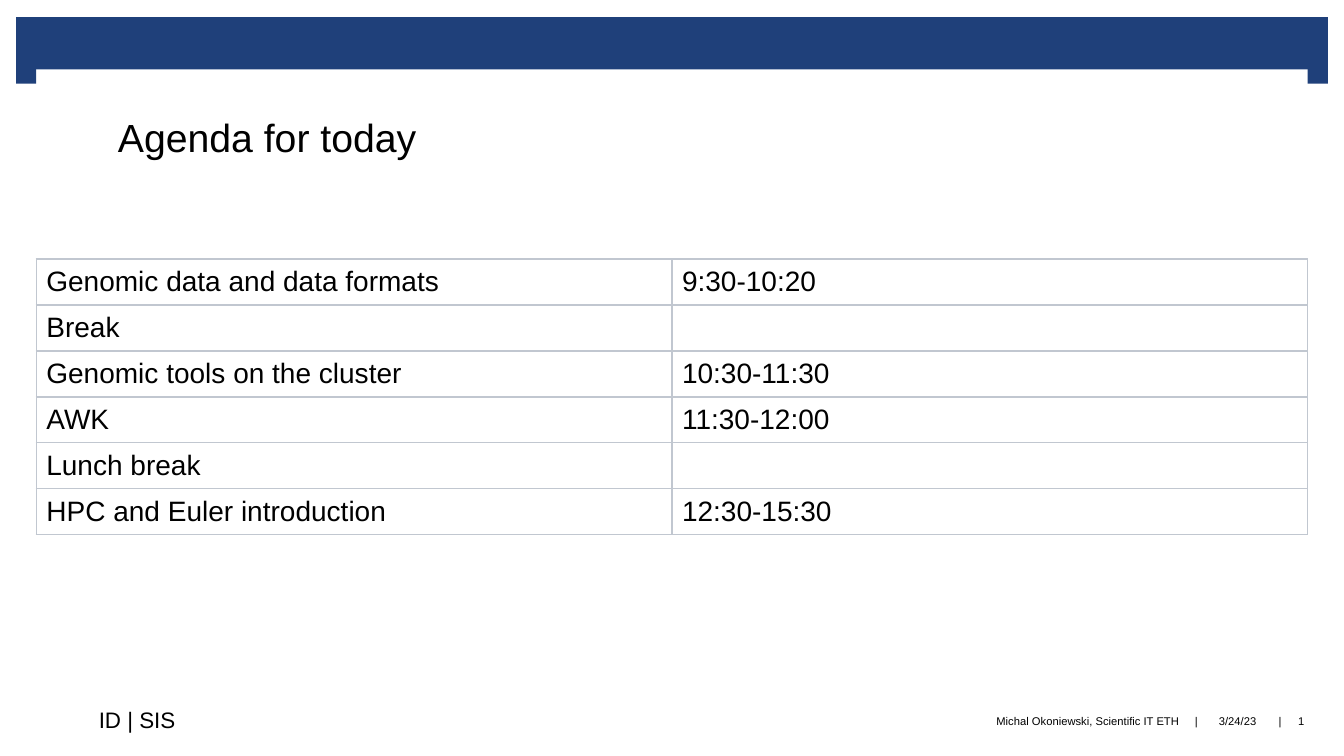
import dataclasses

import lxml.etree
import pptx
import pptx.dml.color
import pptx.enum.shapes
import pptx.enum.text
import pptx.oxml.ns
import pptx.slide
import pptx.table
import pptx.text.text
import pptx.util

NAVY = pptx.dml.color.RGBColor(0x1F, 0x40, 0x7A)
BLACK = pptx.dml.color.RGBColor(0, 0, 0)
GREY = pptx.dml.color.RGBColor(0xC1, 0xC7, 0xD0)
FONT = "Arial"
ALIGN = pptx.enum.text.PP_ALIGN
MIDDLE = pptx.enum.text.MSO_ANCHOR.MIDDLE

WIDTH = pptx.util.Inches(13.33)
HEIGHT = pptx.util.Inches(7.5)


@dataclasses.dataclass(frozen=True)
class Box:
    """A place in percent of the slide's width and height."""
    left: float
    top: float
    width: float
    height: float

    def place(self) -> tuple[int, int, int, int]:
        return (across(self.left), down(self.top),
                across(self.width), down(self.height))


@dataclasses.dataclass(frozen=True)
class Label:
    text: str
    box: Box
    size: int = 8
    align: ALIGN = ALIGN.CENTER


def across(share: float) -> int:
    return round(WIDTH * share / 100)


def down(share: float) -> int:
    return round(HEIGHT * share / 100)


# Header: a bar with a foot at each end
EDGE, SPAN, FOOT = 1.2, 97.6, 1.5
BARS = [
    Box(EDGE, 2.27, SPAN, 6.93),
    Box(EDGE, 8.67, FOOT, 2.4),
    Box(EDGE + SPAN - FOOT, 8.67, FOOT, 2.4),
]

# Title and footer
BASE, TALL = 92, 6.8
LABELS = [
    Label("Agenda for today", Box(8.78, 14.27, 24, 7.6), 28, ALIGN.LEFT),
    Label("ID | SIS", Box(7.35, 90.93, 9, 8.53), 16, ALIGN.LEFT),
    Label("Michal Okoniewski, Scientific IT ETH",
          Box(49.96, BASE, 37.8, TALL), align=ALIGN.RIGHT),
    Label("|", Box(88.45, BASE, 1.13, TALL)),
    Label("3/24/23", Box(89.57, BASE, 5.03, TALL)),
    Label("|", Box(94.67, BASE, 1.13, TALL)),
    Label("1", Box(95.35, BASE, 2.93, TALL)),
]

# Agenda table
AGENDA = [
    ("Genomic data and data formats", "9:30-10:20"),
    ("Break", ""),
    ("Genomic tools on the cluster", "10:30-11:30"),
    ("AWK", "11:30-12:00"),
    ("Lunch break", ""),
    ("HPC and Euler introduction", "12:30-15:30"),
]
ROW = 6.08
GRID = Box(EDGE + FOOT, 34.27, SPAN - 2 * FOOT, ROW * len(AGENDA))


def write(frame: pptx.text.text.TextFrame, text: str, *, size: int,
          align: ALIGN = ALIGN.LEFT) -> None:
    line = frame.paragraphs[0]
    line.text = text
    line.alignment = align
    line.font.name = FONT
    line.font.size = pptx.util.Pt(size)
    line.font.color.rgb = BLACK


def draw_bar(slide: pptx.slide.Slide, box: Box) -> None:
    kind = pptx.enum.shapes.MSO_SHAPE.RECTANGLE
    bar = slide.shapes.add_shape(kind, *box.place())
    bar.shadow.inherit = False
    bar.fill.solid()
    bar.fill.fore_color.rgb = NAVY
    bar.line.fill.background()


def draw_label(slide: pptx.slide.Slide, label: Label) -> None:
    frame = slide.shapes.add_textbox(*label.box.place()).text_frame
    frame.word_wrap = True
    frame.vertical_anchor = MIDDLE
    frame.margin_left = frame.margin_right = 0
    frame.margin_top = frame.margin_bottom = 0
    write(frame, label.text, size=label.size, align=label.align)


def add_rules(cell: pptx.table._Cell) -> None:
    name = pptx.oxml.ns.qn
    props = cell._tc.get_or_add_tcPr()
    for side in ("lnL", "lnR", "lnT", "lnB"):
        rule = lxml.etree.SubElement(props, name(f"a:{side}"),
                                     w=str(pptx.util.Pt(1)))
        fill = lxml.etree.SubElement(rule, name("a:solidFill"))
        lxml.etree.SubElement(fill, name("a:srgbClr"), val=str(GREY))


def draw_table(slide: pptx.slide.Slide, rows: list[tuple[str, str]],
               box: Box) -> None:
    table = slide.shapes.add_table(len(rows), 2, *box.place()).table
    table.first_row = table.horz_banding = False
    for row, texts in enumerate(rows):
        table.rows[row].height = down(ROW)
        for col, text in enumerate(texts):
            cell = table.cell(row, col)
            add_rules(cell)
            cell.fill.background()
            cell.vertical_anchor = MIDDLE
            cell.margin_left = cell.margin_right = across(0.75)
            cell.margin_top = cell.margin_bottom = down(0.8)
            write(cell.text_frame, text, size=20)


def main() -> None:
    deck = pptx.Presentation()
    deck.slide_width, deck.slide_height = WIDTH, HEIGHT
    slide = deck.slides.add_slide(deck.slide_layouts[6])
    for box in BARS:
        draw_bar(slide, box)
    for label in LABELS:
        draw_label(slide, label)
    draw_table(slide, AGENDA, GRID)
    deck.save("out.pptx")


if __name__ == "__main__":
    main()
